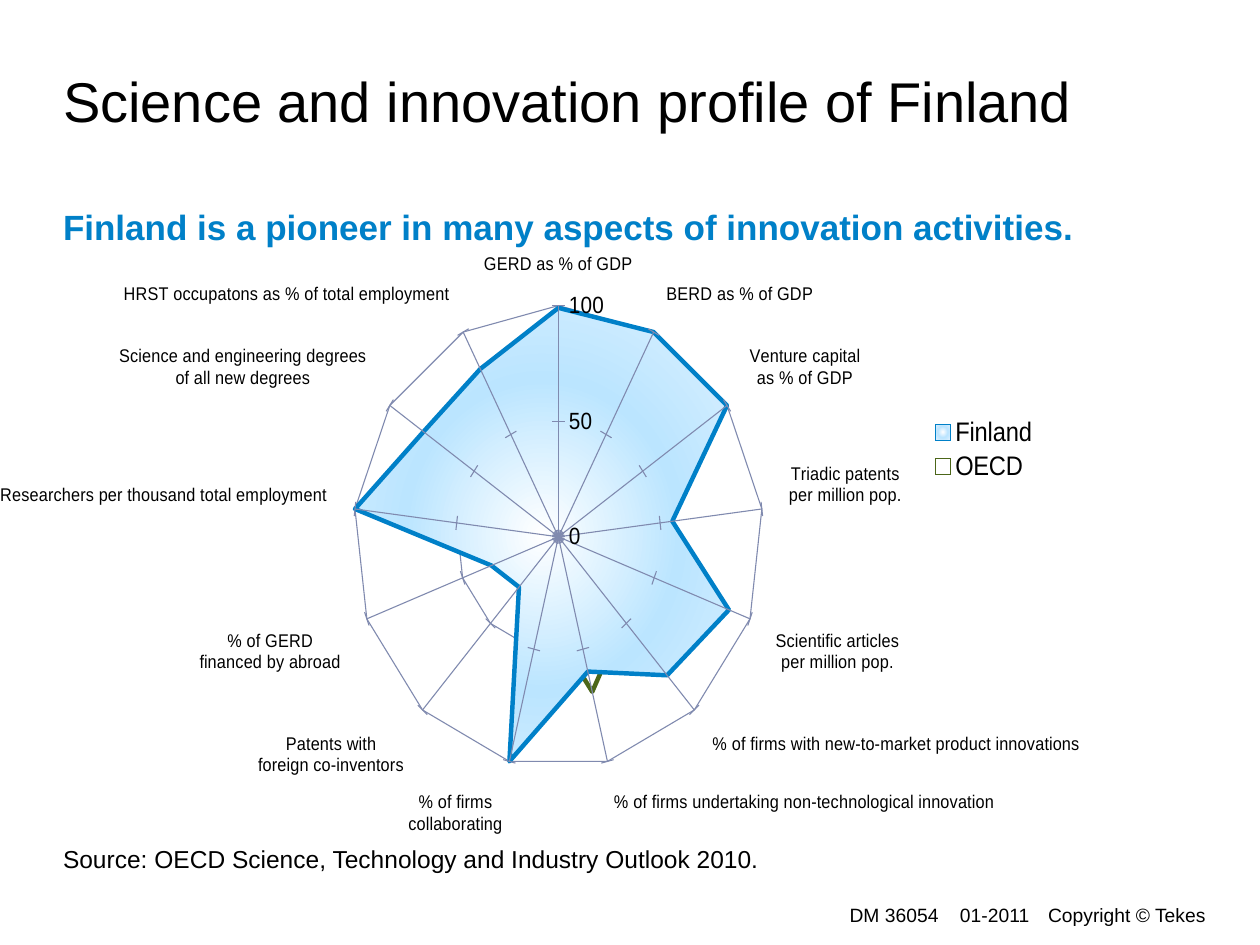
from dataclasses import dataclass

from pptx import Presentation
from pptx.chart.data import CategoryChartData
from pptx.dml.color import RGBColor
from pptx.enum.chart import XL_CHART_TYPE as ChartType
from pptx.enum.chart import XL_LEGEND_POSITION as LegendPosition
from pptx.enum.chart import XL_TICK_MARK as TickMark
from pptx.enum.text import MSO_ANCHOR as Anchor
from pptx.enum.text import PP_ALIGN as Align
from pptx.oxml import parse_xml
from pptx.oxml.ns import nsdecls, qn
from pptx.util import Inches, Pt


@dataclass(frozen=True)
class Theme:
    font: str = "Arial"
    ink: str = "000000"
    accent: str = "0080C8"
    oecd: str = "4C6619"
    grid: str = "808AAF"
    glow: tuple = ((0, "FFFFFF"), (50, "BBE5FF"), (100, "DEF1FF"))
    title: int = 32
    lead: int = 20
    legend: int = 16
    source: int = 14
    scale: int = 14
    small: int = 11


THEME = Theme()

# Indicator, Finland, OECD
PROFILE = [
    ("GERD as % of GDP", 99, 62),
    ("BERD as % of GDP", 100, 59),
    ("Venture capital\nas % of GDP", 100, 42),
    ("Triadic patents\nper million pop.", 56, 36),
    ("Scientific articles\nper million pop.", 89, 44),
    ("% of firms with new-to-market product innovations", 80, 48),
    ("% of firms undertaking non-technological innovation", 60, 69),
    ("% of firms\ncollaborating", 100, 33),
    ("Patents with\nforeign co-inventors", 29, 13),
    ("% of GERD\nfinanced by abroad", 35, 28),
    ("Researchers per thousand total employment", 100, 47),
    ("Science and engineering degrees\nof all new degrees", 80, 58),
    ("HRST occupatons as % of total employment", 82, 67),
]


def add_text(page, text, box, size, color=THEME.ink, bold=False,
             align=Align.LEFT, anchor=Anchor.TOP, spacing=None, wrap=True):
    frame = page.shapes.add_textbox(*map(Inches, box)).text_frame
    frame.margin_left = frame.margin_right = 0
    frame.margin_top = frame.margin_bottom = 0
    frame.word_wrap = wrap
    frame.vertical_anchor = anchor
    para = frame.paragraphs[0]
    para.alignment = align
    para.line_spacing = spacing
    span = para.add_run()
    span.text = text
    set_font(span.font, size, color)
    span.font.bold = bold


def set_font(font, size, color=THEME.ink):
    font.name = THEME.font
    font.size = Pt(size)
    font.color.rgb = RGBColor.from_string(color)


def set_line(line, color, width):
    line.color.rgb = RGBColor.from_string(color)
    line.width = Pt(width)


def make_layout(x, y, w, h, inner=False):
    """Manual chart layout in fractions of the chart's size."""
    target = '<c:layoutTarget val="inner"/>' if inner else ""
    modes = '<c:xMode val="edge"/><c:yMode val="edge"/>'
    sizes = "".join(f'<c:{name} val="{value}"/>'
                    for name, value in zip("xywh", (x, y, w, h)))
    return parse_xml(f'<c:layout {nsdecls("c")}><c:manualLayout>'
                     f'{target}{modes}{sizes}</c:manualLayout></c:layout>')


def make_glow(stops):
    """Circular gradient that spreads from the centre."""
    marks = "".join(f'<a:gs pos="{pos * 1000}"><a:srgbClr val="{color}"/></a:gs>'
                    for pos, color in stops)
    return parse_xml(
        f'<a:gradFill {nsdecls("a")} rotWithShape="0"><a:gsLst>{marks}</a:gsLst>'
        '<a:path path="circle"><a:fillToRect l="50000" t="50000" r="50000" '
        'b="50000"/></a:path></a:gradFill>')


def place_layout(parent, layout, index):
    for old in parent.findall(qn("c:layout")):
        parent.remove(old)
    parent.insert(index, layout)


def add_header(page, left, top):
    add_text(page, "Science and innovation profile of Finland",
             (left, top, 8.85, 0.97), THEME.title, spacing=0.9)
    add_text(page, "Finland is a pioneer in many aspects of innovation activities.",
             (left, top + 1.04, 8.08, 0.34), THEME.lead, THEME.accent,
             bold=True, wrap=False)


def add_radar(page, box):
    names, finland, oecd = zip(*PROFILE)
    data = CategoryChartData(number_format="0")
    data.categories = names
    data.add_series("Finland", finland)
    data.add_series("OECD", oecd)
    chart = page.shapes.add_chart(ChartType.RADAR_FILLED,
                                  *map(Inches, box), data).chart
    chart.has_title = False
    set_font(chart.font, THEME.small)
    plot = chart.plots[0]
    plot.vary_by_categories = False
    place_layout(chart._chartSpace.chart.plotArea,
                 make_layout(0.216, 0.11, 0.448, 0.821, inner=True), 0)

    # Series
    first, second = plot.series
    set_line(first.format.line, THEME.accent, 3)
    first._element.get_or_add_spPr().insert(0, make_glow(THEME.glow))
    second.format.fill.background()
    set_line(second.format.line, THEME.oecd, 3)

    # Axes
    scale = chart.value_axis
    scale.minimum_scale, scale.maximum_scale, scale.major_unit = 0, 100, 50
    scale.tick_labels.number_format = "0"
    scale.tick_labels.number_format_is_linked = False
    for axis, size in ((chart.category_axis, THEME.small), (scale, THEME.scale)):
        axis.has_major_gridlines = True
        axis.major_tick_mark = TickMark.CROSS
        set_line(axis.major_gridlines.format.line, THEME.grid, 0.75)
        set_line(axis.format.line, THEME.grid, 0.75)
        set_font(axis.tick_labels.font, size)

    # Legend
    chart.has_legend = True
    legend = chart.legend
    legend.position = LegendPosition.RIGHT
    legend.include_in_layout = False
    set_font(legend.font, THEME.legend)
    place_layout(legend._element, make_layout(0.84, 0.3, 0.13, 0.13), 1)


def add_footer(page, top):
    notes = [
        ("DM 36054", 5.88, 1.57, Align.RIGHT),
        ("01-2011", 7.56, 0.67, Align.CENTER),
        ("Copyright © Tekes", 8.24, 1.33, Align.RIGHT),
    ]
    for text, left, width, align in notes:
        add_text(page, text, (left, top, width, 0.2), THEME.small,
                 align=align, anchor=Anchor.MIDDLE)


def main():
    deck = Presentation()
    deck.slide_width, deck.slide_height = Inches(10), Inches(7.5)
    page = deck.slides.add_slide(deck.slide_layouts[6])
    add_header(page, 0.5, 0.59)
    add_radar(page, (0, 1.93, 8.58, 4.69))
    add_text(page, "Source: OECD Science, Technology and Industry Outlook 2010.",
             (0.5, 6.72, 5.69, 0.26), THEME.source, spacing=Pt(15))
    add_footer(page, 7.16)
    deck.save("out.pptx")


if __name__ == "__main__":
    main()
